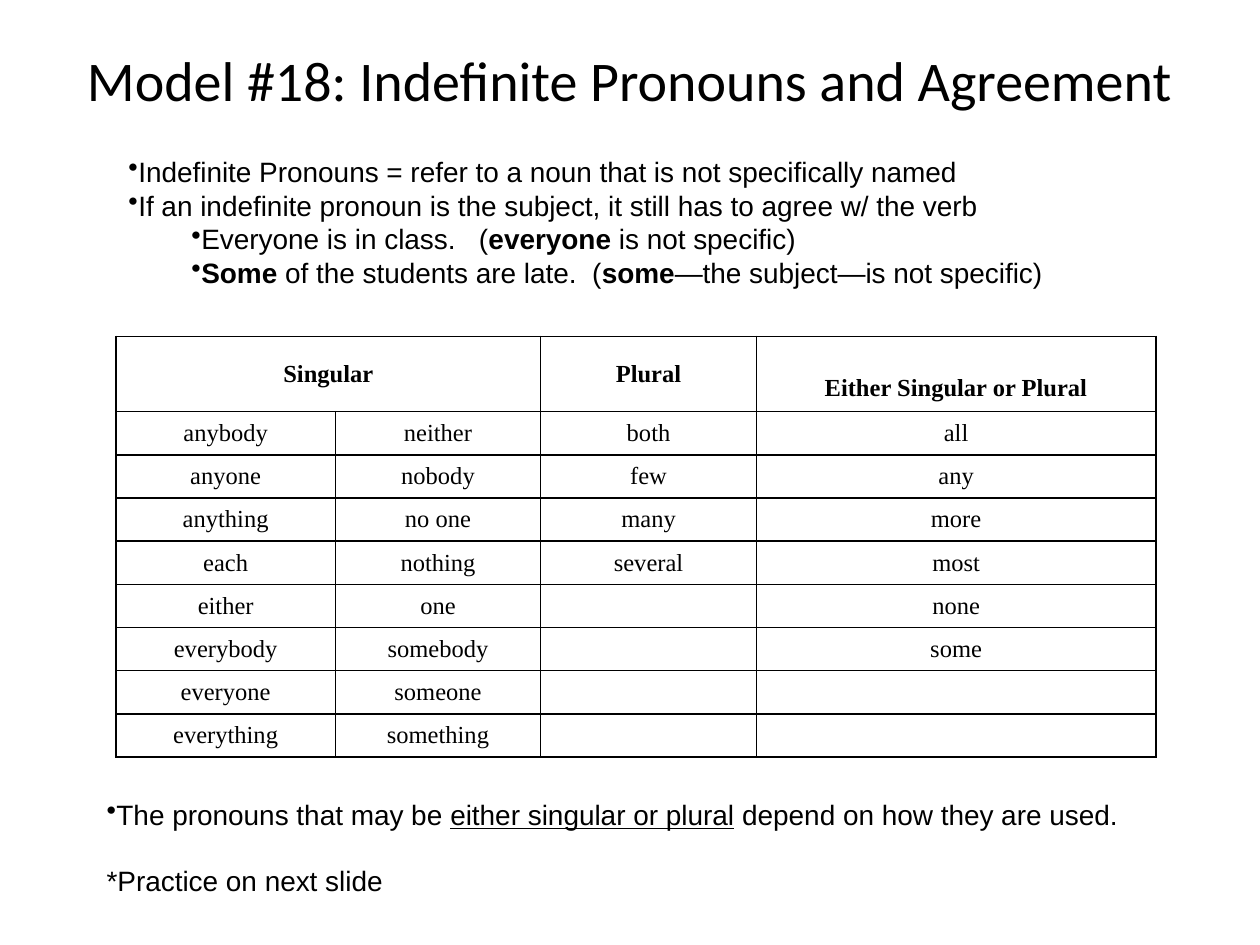
from lxml.etree import SubElement
from pptx import Presentation
from pptx.dml.color import RGBColor
from pptx.enum.text import MSO_VERTICAL_ANCHOR as Anchor, PP_PARAGRAPH_ALIGNMENT as Align
from pptx.oxml import parse_xml
from pptx.oxml.ns import nsdecls, qn
from pptx.util import Cm, Pt

COLORS = {"text": "000000", "border": "000000", "paper": "FFFFFF"}

TITLE = "Model #18: Indefinite Pronouns and Agreement"
RULES = [
    {"spans": [("Indefinite Pronouns = refer to a noun that is not specifically named", "")],
     "bullet": True},
    {"spans": [("If an indefinite pronoun is the subject, it still has to agree w/ the verb", "")],
     "bullet": True},
    {"spans": [("Everyone is in class.   (", ""), ("everyone ", "bold"), ("is not specific)", "")],
     "bullet": True, "level": 1},
    {"spans": [("Some", "bold"), (" of the students are late.  (", ""), ("some", "bold"),
               ("—the subject—is not specific)", "")],
     "bullet": True, "level": 1},
]
CLOSING = [
    {"spans": [("The pronouns that may be ", ""), ("either singular or plural", "underline"),
               (" depend on how they are used.", "")],
     "bullet": True},
    {"spans": [("*Practice on next slide", "")], "before": 18.4},
]
HEADERS = ["Singular", "", "Plural", "Either Singular or Plural"]
PRONOUNS = [
    ["anybody", "anyone", "anything", "each", "either", "everybody", "everyone", "everything"],
    ["neither", "nobody", "no one", "nothing", "one", "somebody", "someone", "something"],
    ["both", "few", "many", "several"],
    ["all", "any", "more", "most", "none", "some"],
]
COLUMN_WIDTHS = [4.42, 4.14, 4.35, 8.05]
HEADER_HEIGHT, ROW_HEIGHT = 1.52, 0.87
TABLE_LEFT, TABLE_TOP = 2.34, 6.78


def set_font(para, name, size, bold=False):
    para.font.name = name
    para.font.size = Pt(size)
    para.font.bold = bold
    para.font.color.rgb = RGBColor.from_string(COLORS["text"])


def add_text(slide, area, content, font_name, size, align=Align.LEFT):
    frame = slide.shapes.add_textbox(*map(Cm, area)).text_frame
    frame.word_wrap = True
    frame.vertical_anchor = Anchor.MIDDLE
    for index, item in enumerate(content):
        para = frame.add_paragraph() if index else frame.paragraphs[0]
        properties = para._p.get_or_add_pPr()
        level = item.get("level", 0)
        properties.set("marL", str(Cm(1.27 * level)))
        properties.set("indent", "0")
        if item.get("bullet"):
            SubElement(properties, qn("a:buChar"), char="•")
        para.level = level
        para.alignment = align
        para.space_before = Pt(item.get("before", 0))
        set_font(para, font_name, size)
        for text, style in item["spans"]:
            span = para.add_run()
            span.text = text
            if style:
                setattr(span.font, style, True)


def add_borders(cell):
    properties = cell._tc.get_or_add_tcPr()
    for index, side in enumerate("LRTB"):
        properties.insert(index, parse_xml(
            f'<a:ln{side} {nsdecls("a")} w="{Pt(1)}"><a:solidFill>'
            f'<a:srgbClr val="{COLORS["border"]}"/></a:solidFill></a:ln{side}>'))


def add_pronoun_table(slide):
    count = max(map(len, PRONOUNS))
    heights = [HEADER_HEIGHT] + [ROW_HEIGHT] * count
    table = slide.shapes.add_table(
        len(heights), len(HEADERS), Cm(TABLE_LEFT), Cm(TABLE_TOP),
        Cm(sum(COLUMN_WIDTHS)), Cm(sum(heights))).table
    table.first_row = table.horz_banding = False
    for row, height in zip(table.rows, heights):
        row.height = Cm(height)
    for column, (header, words) in enumerate(zip(HEADERS, PRONOUNS)):
        table.columns[column].width = Cm(COLUMN_WIDTHS[column])
        entries = [header] + words + [""] * (count - len(words))
        for row, entry in enumerate(entries):
            cell = table.cell(row, column)
            cell.fill.solid()
            cell.fill.fore_color.rgb = RGBColor.from_string(COLORS["paper"])
            cell.vertical_anchor = Anchor.MIDDLE
            cell.margin_left = cell.margin_right = Cm(0.13)
            cell.margin_top = cell.margin_bottom = Cm(0)
            cell.text = entry
            para = cell.text_frame.paragraphs[0]
            para.alignment = Align.CENTER
            set_font(para, "Times New Roman", 14, bold=row == 0)
            add_borders(cell)
    table.cell(0, 0).merge(table.cell(0, 1))
    table.cell(0, 3).margin_top = Cm(0.57)


def main():
    deck = Presentation()
    deck.slide_width, deck.slide_height = Cm(25.4), Cm(19.05)
    slide = deck.slides.add_slide(deck.slide_layouts[6])
    add_text(slide, (1.27, 0, 22.86, 3.18), [{"spans": [(TITLE, "")]}],
             "Calibri", 32, Align.CENTER)
    add_pronoun_table(slide)
    add_text(slide, (2.34, 2.97, 21.16, 3), RULES, "Arial", 16)
    add_text(slide, (1.9, 15.88, 21.6, 2.39), CLOSING, "Arial", 16)
    deck.save("out.pptx")


if __name__ == "__main__":
    main()
